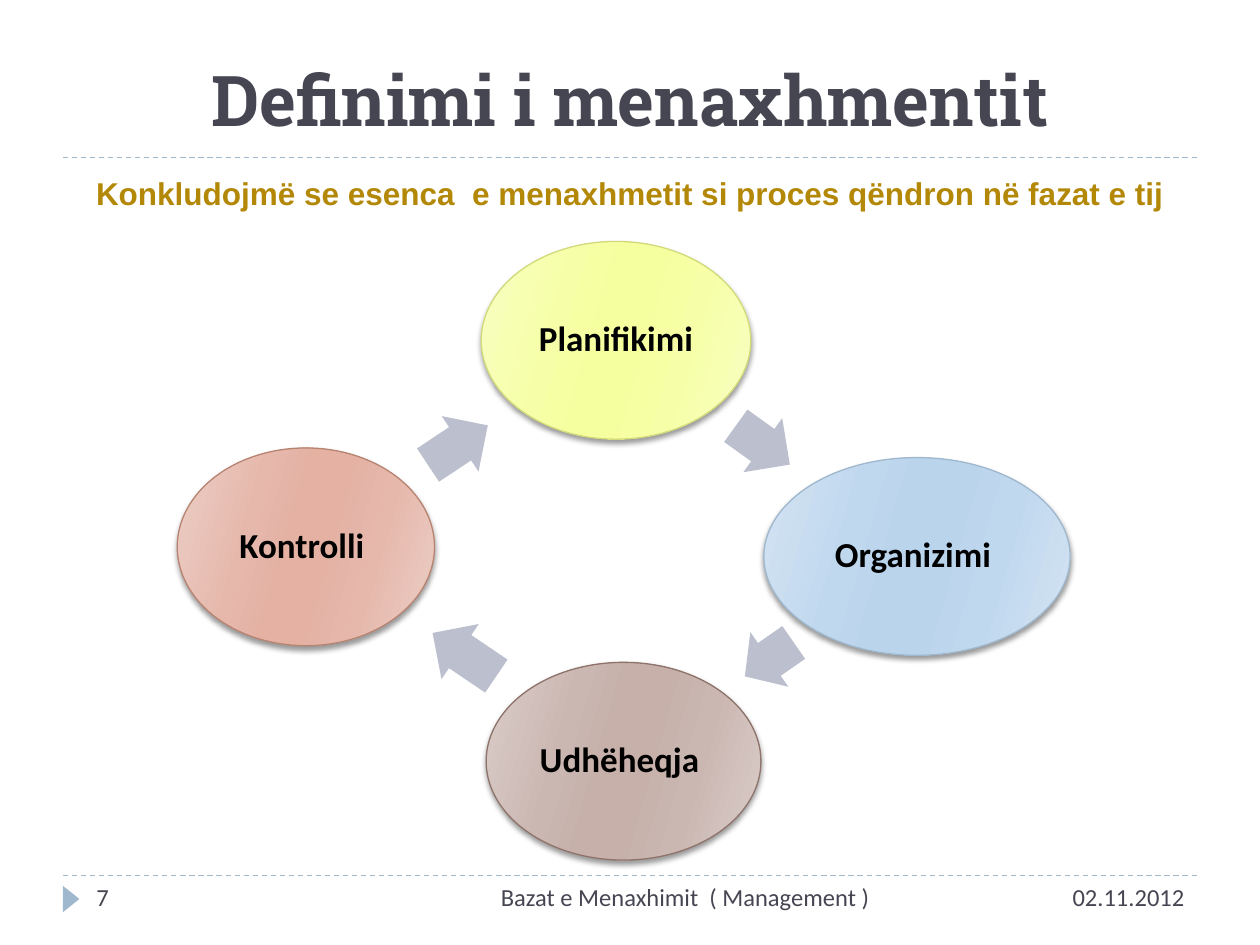
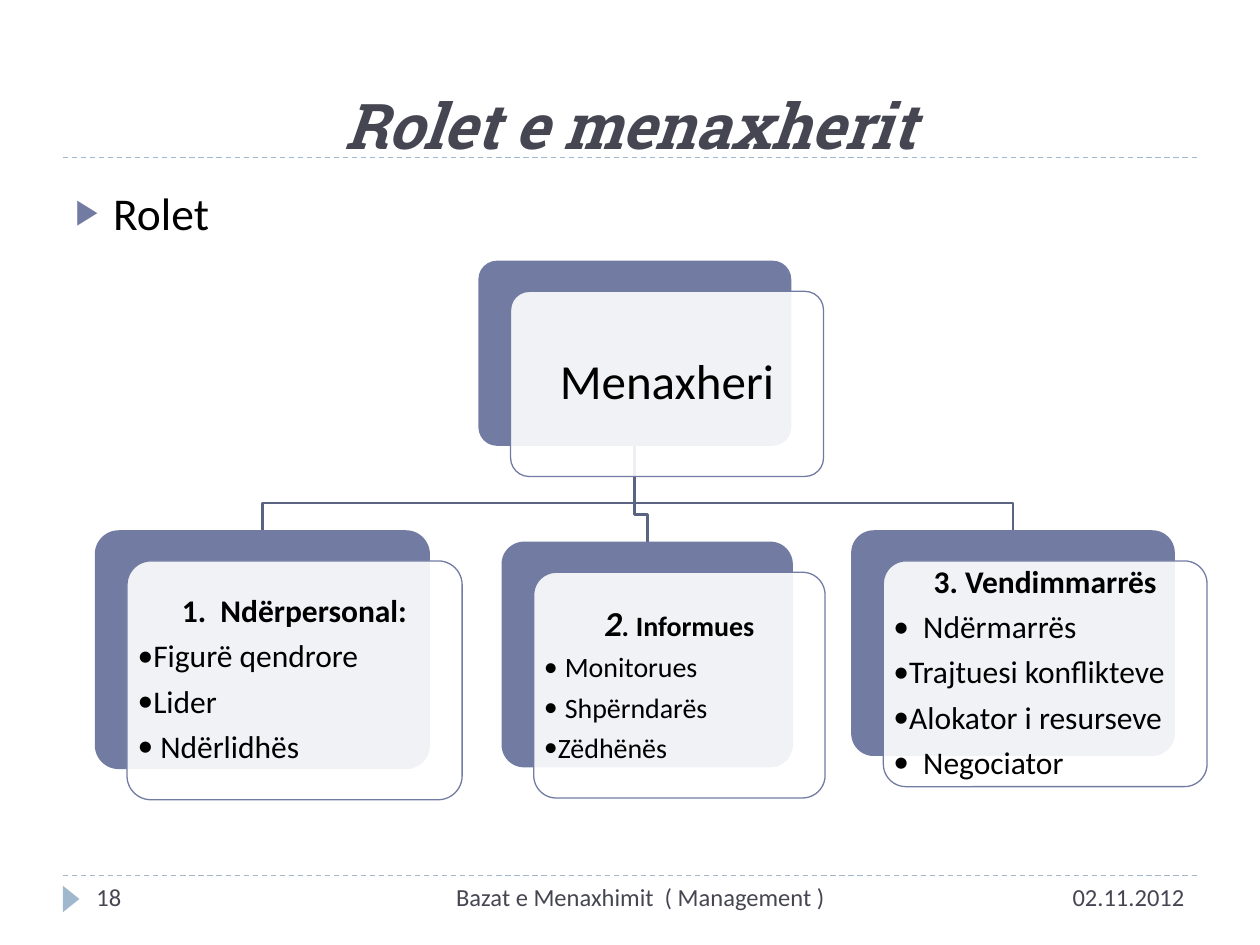
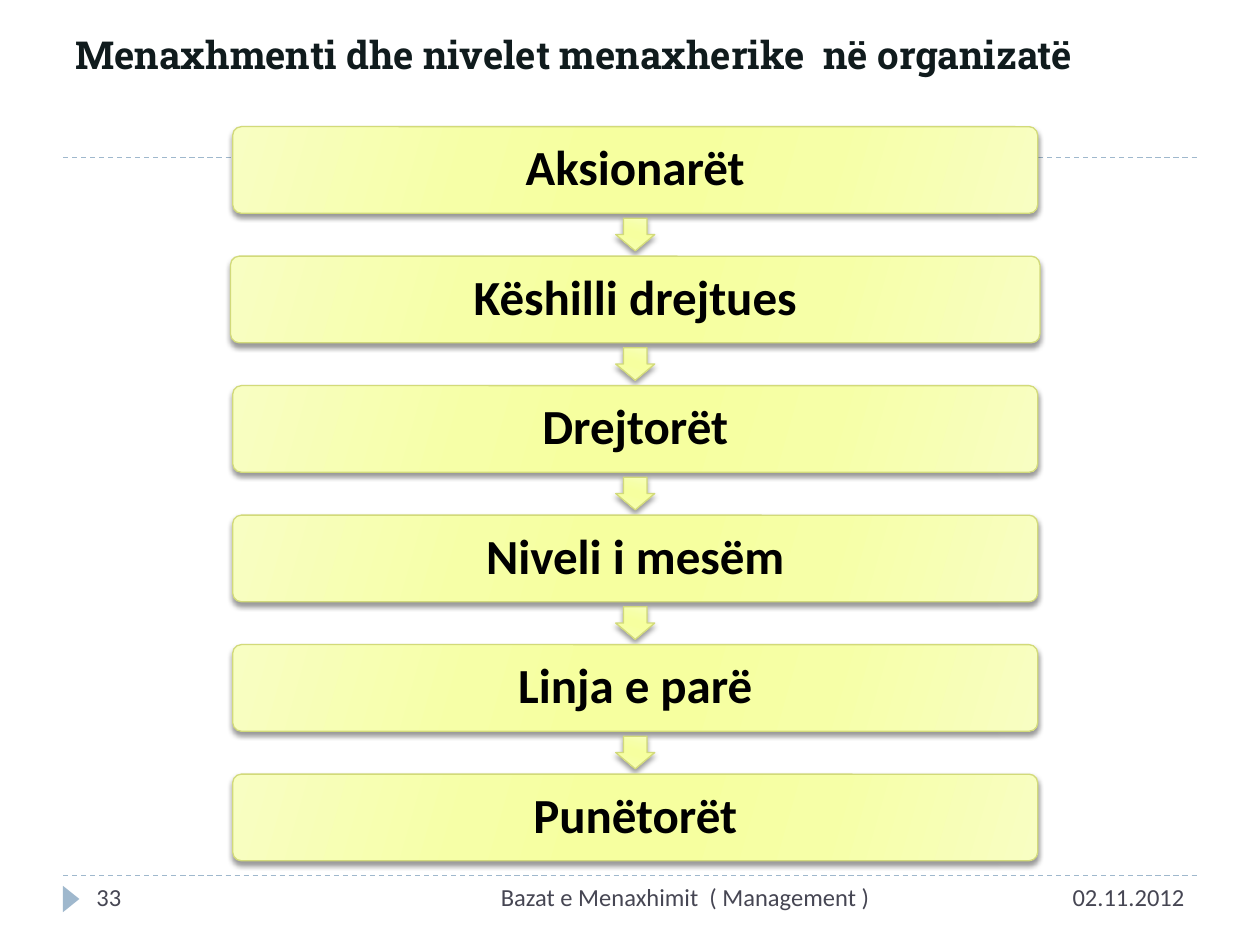
"""Builds three slides on management: its phases, the manager's roles and the levels."""
from dataclasses import dataclass, field

from lxml.etree import SubElement
from pptx import Presentation
from pptx.dml.color import RGBColor
from pptx.enum.dml import MSO_LINE
from pptx.enum.shapes import MSO_CONNECTOR, MSO_SHAPE
from pptx.enum.text import MSO_ANCHOR, MSO_AUTO_SIZE, PP_ALIGN
from pptx.oxml.ns import qn
from pptx.util import Pt


@dataclass(frozen=True)
class Theme:
    """Colours, fonts and type sizes."""
    text: str = "000000"
    heading: str = "464653"
    dark_heading: str = "101B1D"
    gold: str = "B38807"
    rule: str = "9FB8CD"
    indigo: str = "727CA3"
    elbow: str = "5B6383"
    arrow: str = "BCBFCE"
    white: str = "FFFFFF"
    yellow: tuple = ("F8FEC2", "F6FFA7", "F6FF9F", "D2DA7A")
    blue: tuple = ("D3E3F2", "C0D8EE", "BAD4EC", "9FB8CD")
    brown: tuple = ("DACDCA", "CBB7B2", "C6B0A9", "8E736A")
    red: tuple = ("ECCEC6", "E6B8AC", "E4B1A3", "B88472")
    body_font: str = "Calibri"
    title_font: str = "Roboto Slab"
    note_font: str = "Arial"
    title: int = 40
    subtitle: int = 36
    headline: int = 22
    lead: int = 26
    box: int = 28
    phase: int = 20
    card: int = 18
    small_card: int = 16
    footer: int = 14


@dataclass
class Para:
    """One paragraph: its runs, format values and bullet."""
    runs: list
    fmt: dict = field(default_factory=dict)
    bullet: tuple = None


T = Theme()
LEFT, CENTER, RIGHT = PP_ALIGN.LEFT, PP_ALIGN.CENTER, PP_ALIGN.RIGHT


def put(obj, **values):
    """Set each given value as an attribute."""
    for key, value in values.items():
        setattr(obj, key, value)


def line(text, size, align=LEFT, color=T.text, **font):
    """Return a paragraph of one run."""
    return Para([(text, size, color, font)], {"alignment": align})


def block(para, bullet=None):
    """Give a paragraph the spacing used inside shapes."""
    size = para.runs[-1][1]
    para.fmt.update(line_spacing=0.9, space_after=Pt(0.35 * size))
    para.bullet = bullet
    return para


class Deck:
    """Holds the presentation and the slide being drawn."""

    def __init__(self):
        self.prs = Presentation()
        put(self.prs, slide_width=Pt(720), slide_height=Pt(540))
        self.layout = self.prs.slide_layouts[5]
        for ph in list(self.layout.placeholders):
            if ph.placeholder_format.idx:
                ph.element.getparent().remove(ph.element)
        self.s = None

    def slide(self, box, title, number, footer_align=RIGHT):
        """Add a slide with its title and footer."""
        first = self.s is None
        self.s = self.prs.slides.add_slide(self.layout)
        if first:
            self.dress_layout()
        sp = self.s.shapes.title
        left, top, width, height = map(Pt, box)
        put(sp, left=left, top=top, width=width, height=height)
        self.set_text(sp, [title], vertical_anchor=MSO_ANCHOR.BOTTOM)
        for left, width, text, align in (
                (504, 180, "02.11.2012", RIGHT),
                (228, 276, "Bazat e Menaxhimit  ( Management )", footer_align),
                (48, 156, number, LEFT)):
            self.text((left, 500.4, width, 28.8),
                      line(text, T.footer, align, T.heading))

    def dress_layout(self):
        """Draw the rules and the footer mark and move them to the layout."""
        marks = [self.rule(90), self.rule(500.4)]
        marks.append(self.shape(MSO_SHAPE.ISOSCELES_TRIANGLE,
                                (33.1, 509, 15.1, 9.4), T.rule, rotation=90))
        for mark in marks:
            self.layout.shapes.element.append(mark.element)

    def rule(self, y):
        """Draw a dashed line across the slide."""
        sp = self.s.shapes.add_connector(
            MSO_CONNECTOR.STRAIGHT, Pt(36), Pt(y), Pt(684), Pt(y))
        sp.line.color.rgb = RGBColor.from_string(T.rule)
        put(sp.line, width=Pt(0.75), dash_style=MSO_LINE.DASH)
        SubElement(sp.element.spPr, qn("a:effectLst"))
        return sp

    def set_text(self, sp, paras, **frame):
        """Fill a shape with paragraphs."""
        tf = sp.text_frame
        put(tf, word_wrap=True, auto_size=MSO_AUTO_SIZE.NONE, **frame)
        for i, para in enumerate(paras):
            p = tf.add_paragraph() if i else tf.paragraphs[0]
            put(p, **para.fmt)
            for text, size, color, font in para.runs:
                r = p.add_run()
                r.text = text
                put(r.font, **{"name": T.body_font, "size": Pt(size), **font})
                r.font.color.rgb = RGBColor.from_string(color)
            if para.bullet:
                self.bullet(p, *para.bullet)

    def bullet(self, p, char, indent, color=T.text, percent=100):
        """Give a paragraph a bullet with a hanging indent."""
        pPr = p._p.get_or_add_pPr()
        pPr.set("marL", str(Pt(indent)))
        pPr.set("indent", str(-Pt(indent)))
        SubElement(SubElement(pPr, qn("a:buClr")), qn("a:srgbClr"), val=color)
        SubElement(pPr, qn("a:buSzPct"), val=str(percent * 1000))
        SubElement(pPr, qn("a:buFont"), typeface=T.body_font)
        SubElement(pPr, qn("a:buChar"), char=char)

    def text(self, box, *paras):
        """Add a text box."""
        self.set_text(self.s.shapes.add_textbox(*map(Pt, box)), paras)

    def shape(self, kind, box, fill, outline=None, paras=(), adj=(), rotation=0):
        """Add a preset shape with a plain fill, and text if any."""
        sp = self.s.shapes.add_shape(kind, *map(Pt, box))
        put(sp, rotation=rotation)
        sp.shadow.inherit = False
        for i, value in enumerate(adj):
            sp.adjustments[i] = value
        sp.fill.solid()
        sp.fill.fore_color.rgb = RGBColor.from_string(fill)
        if outline:
            sp.line.color.rgb = RGBColor.from_string(outline)
            sp.line.width = Pt(0.75)
        else:
            sp.line.fill.background()
        if paras:
            inset = {f"margin_{side}": Pt(2)
                     for side in ("left", "top", "right", "bottom")}
            self.set_text(sp, paras, vertical_anchor=MSO_ANCHOR.MIDDLE, **inset)
        return sp

    def glossy(self, kind, box, tones, **options):
        """Add a shape with a gradient and a soft shadow."""
        edge, mid, core, outline = tones
        sp = self.shape(kind, box, core, outline, **options)
        sp.fill.gradient()
        sp.fill.gradient_angle = 344
        spPr = sp.element.spPr
        stops = spPr.find(".//" + qn("a:gsLst"))
        stops.clear()
        for pos, color in zip((0, 30, 45, 55, 73, 100),
                              (edge, mid, core, core, mid, edge)):
            gs = SubElement(stops, qn("a:gs"), pos=str(pos * 1000))
            SubElement(gs, qn("a:srgbClr"), val=color)
        shadow = SubElement(spPr.find(qn("a:effectLst")), qn("a:outerShdw"),
                            blurRad=str(Pt(3)), dist=str(Pt(2)),
                            dir="5400000", rotWithShape="0")
        clr = SubElement(shadow, qn("a:srgbClr"), val="000000")
        SubElement(clr, qn("a:alpha"), val="40000")

    def card(self, box, paras):
        """Add a solid card with a translucent one in front of it."""
        left, top, width, height = box
        kind = MSO_SHAPE.ROUNDED_RECTANGLE
        self.shape(kind, box, T.indigo, adj=(0.1,))
        sp = self.shape(kind, (left + 18.4, top + 17.5, width, height),
                        T.white, T.indigo, paras, (0.1,))
        clr = sp.element.spPr.find(qn("a:solidFill")).find(qn("a:srgbClr"))
        SubElement(clr, qn("a:alpha"), val="90000")

    def elbow(self, start, end, bend):
        """Draw a line that goes down, across and down again."""
        (x1, y1), (x2, y2) = start, end
        fb = self.s.shapes.build_freeform(Pt(x1), Pt(y1))
        fb.add_line_segments([(Pt(x), Pt(y)) for x, y in
                              ((x1, bend), (x2, bend), (x2, y2))], close=False)
        sp = fb.convert_to_shape()
        sp.shadow.inherit = False
        sp.fill.background()
        sp.line.color.rgb = RGBColor.from_string(T.elbow)
        sp.line.width = Pt(1.5)


def phases(deck):
    """Draw the cycle of management phases."""
    deck.slide((36, 18, 648, 66),
               line("Definimi i menaxhmentit", T.title, CENTER, T.heading,
                    name=T.title_font, bold=True), "7")
    for name, left, top, width, tones in (
            ("Planifikimi", 275, 138, 154, T.yellow),
            ("Organizimi ", 436.5, 261.5, 175, T.blue),
            ("Udhëheqja ", 277.8, 378.5, 157, T.brown),
            ("Kontrolli ", 101.3, 256, 147, T.red)):
        label = block(line(name, T.phase, CENTER, bold=True))
        deck.glossy(MSO_SHAPE.OVAL, (left, top, width, 113), tones, paras=[label])
    for left, top, width, rotation in (
            (416.9, 235.4, 38, 35.7), (422.6, 357.8, 34, 145.2),
            (243.4, 355, 44, 214.1), (241.2, 235.4, 41, 326.4)):
        deck.shape(MSO_SHAPE.RIGHT_ARROW, (left, top, width, 38), T.arrow,
                   adj=(0.6, 0.5), rotation=rotation)
    deck.text((36, 96, 648, 29),
              line("Konkludojmë se esenca  e menaxhmetit si proces qëndron në fazat e tij",
                   T.card, CENTER, T.gold, name=T.note_font, bold=True))


def roles(deck):
    """Draw the chart of the manager's roles."""
    deck.slide((36, 42, 648, 54),
               line("Rolet e menaxherit", T.subtitle, CENTER, T.heading,
                    name=T.title_font, bold=True, italic=True), "18", CENTER)
    lead = line("Rolet", T.lead)
    lead.fmt["space_before"] = Pt(6)
    lead.bullet = ("▶", 21.6, T.indigo, 76)
    deck.text((36, 102, 660, 396), lead)

    informer = Para([("2", T.phase, T.text, {"bold": True, "italic": True}),
                     (". ", T.small_card, T.text, {"bold": True, "italic": True}),
                     ("Informues", T.small_card, T.text, {"bold": True})],
                    {"alignment": CENTER})
    cards = (
        ((54.2, 303, 191.5, 136.5), T.card,
         line("1.  Ndërpersonal:", T.card, CENTER, bold=True),
         (("Figurë qendrore", 9), ("Lider", 9), ("Ndërlidhës", 13))),
        ((286.6, 309.5, 166.5, 129), T.small_card, informer,
         (("Monitorues", 12), ("Shpërndarës", 12), ("Zëdhënës", 8))),
        ((486.4, 303, 185, 129), T.card,
         line("3. Vendimmarrës", T.card, CENTER, bold=True),
         (("Ndërmarrës", 17), ("Trajtuesi konflikteve", 9),
          ("Alokator i resurseve", 9), ("Negociator", 17))))
    for (left, top, width, _), *_ in cards:
        deck.elbow((362.6, 255), (left + width / 2, top), top - 15.5)
    deck.card((273.4, 149, 178.8, 105.8),
              [block(line("Menaxheri", T.box, CENTER))])
    for box, size, head, items in cards:
        deck.card(box, [block(head)] + [block(line(text, size), ("•", indent))
                                        for text, indent in items])


def levels(deck):
    """Draw the chain of management levels."""
    deck.slide((36, 12, 648, 36),
               line("Menaxhmenti dhe nivelet menaxherike  në organizatë",
                    T.headline, LEFT, T.dark_heading,
                    name=T.title_font, bold=True), "33")
    names = ("Aksionarët", "Këshilli drejtues", "Drejtorët",
             "Niveli i mesëm", "Linja e parë", "Punëtorët")
    middle, first, pitch = 363, 72.4, 74
    for i, name in enumerate(names):
        top = first + i * pitch
        width = 462.5 if i == 1 else 460
        deck.glossy(MSO_SHAPE.ROUNDED_RECTANGLE,
                    (middle - width / 2, top, width, 49.5), T.yellow, adj=(0.1,),
                    paras=[block(line(name, T.box, CENTER, bold=True))])
        if i < len(names) - 1:
            deck.glossy(MSO_SHAPE.RIGHT_ARROW, (middle - 9.3, top + 50.5, 18.6, 22.3),
                        T.yellow, adj=(0.6, 0.5), rotation=90)


def main():
    """Build the slides and save them."""
    deck = Deck()
    for draw in (phases, roles, levels):
        draw(deck)
    deck.prs.save("out.pptx")


if __name__ == "__main__":
    main()
